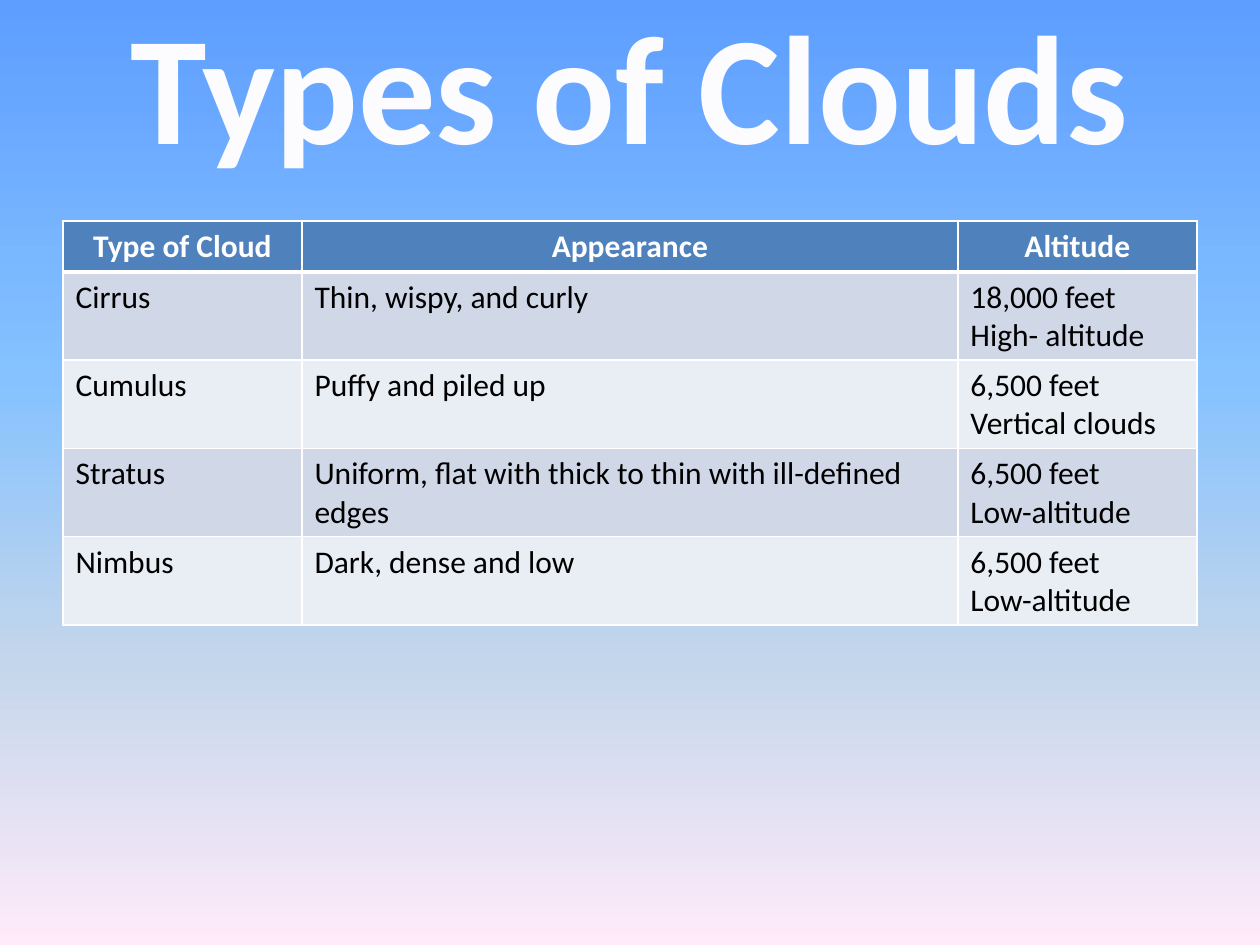
from lxml import etree
from pptx import Presentation
from pptx.dml.color import RGBColor
from pptx.enum.text import MSO_ANCHOR, PP_ALIGN
from pptx.oxml import parse_xml
from pptx.oxml.ns import nsdecls, qn
from pptx.util import Pt

CENTER, LEFT = PP_ALIGN.CENTER, PP_ALIGN.LEFT
MIDDLE = MSO_ANCHOR.MIDDLE
PX = 914400 // 126
FONT = "Calibri"

TITLE = "Types of Clouds"
CLOUDS = [
    ("Type of Cloud", "Appearance", "Altitude"),
    ("Cirrus", "Thin, wispy, and curly", "18,000 feet\nHigh- altitude"),
    ("Cumulus", "Puffy and piled up", "6,500 feet\nVertical clouds"),
    ("Stratus", "Uniform, flat with thick to thin with ill-defined edges",
     "6,500 feet\nLow-altitude"),
    ("Nimbus", "Dark, dense and low", "6,500 feet\nLow-altitude"),
]
COLUMN_WIDTHS = [239, 656, 239]
ROW_HEIGHT = 51
SKY = [(0, "5E9EFF"), (40, "85C2FF"), (70, "C4D6EB"), (100, "FFEBFA")]
COLORS = {
    "title": "FCFCFF", "title_outline": "1E7CEE", "header": "4F81BD",
    "header_text": "FFFFFF", "odd_row": "D0D8E8", "even_row": "E9EDF4",
    "text": "000000", "border": "FFFFFF",
}


def px(*lengths):
    return [length * PX for length in lengths]


def paint_sky(slide):
    stops = "".join(
        f'<a:gs pos="{pos * 1000}"><a:srgbClr val="{color}"/></a:gs>'
        for pos, color in SKY)
    sky = parse_xml(
        f'<p:bg {nsdecls("p", "a")}><p:bgPr><a:gradFill rotWithShape="1">'
        f'<a:gsLst>{stops}</a:gsLst><a:lin ang="5400000" scaled="0"/>'
        '</a:gradFill><a:effectLst/></p:bgPr></p:bg>')
    slide.element.cSld.insert(0, sky)


def format_text(frame, size, color, bold, align):
    for paragraph in frame.paragraphs:
        paragraph.alignment = align
        for run in paragraph.runs:
            run.font.name = FONT
            run.font.size = Pt(size)
            run.font.bold = bold
            run.font.color.rgb = RGBColor.from_string(COLORS[color])


def add_title(slide):
    title = slide.shapes.add_textbox(*px(63, 38, 1134, 158)).text_frame
    title.word_wrap = True
    title.vertical_anchor = MIDDLE
    title.margin_bottom = 74 * PX
    title.text = TITLE
    format_text(title, 88.2, "title", True, CENTER)
    outline = parse_xml(
        f'<a:ln {nsdecls("a")} w="889"><a:solidFill>'
        f'<a:srgbClr val="{COLORS["title_outline"]}"><a:alpha val="55000"/>'
        '</a:srgbClr></a:solidFill></a:ln>')
    title.paragraphs[0].runs[0].font._element.insert(0, outline)


def set_borders(cell, widths):
    properties = cell._tc.get_or_add_tcPr()
    for place, (side, width) in enumerate(widths.items()):
        line = etree.Element(qn(f"a:ln{side}"), w=str(Pt(width)))
        fill = etree.SubElement(line, qn("a:solidFill"))
        etree.SubElement(fill, qn("a:srgbClr"), val=COLORS["border"])
        properties.insert(place, line)


def add_clouds(slide):
    table = slide.shapes.add_table(
        len(CLOUDS), len(COLUMN_WIDTHS),
        *px(63, 221, sum(COLUMN_WIDTHS), ROW_HEIGHT * len(CLOUDS))).table
    for column, width in zip(table.columns, COLUMN_WIDTHS):
        column.width = width * PX
    for r, entries in enumerate(CLOUDS):
        table.rows[r].height = ROW_HEIGHT * PX
        header = r == 0
        fill = "header" if header else "odd_row" if r % 2 else "even_row"
        for c, entry in enumerate(entries):
            cell = table.cell(r, c)
            cell.text_frame.text = entry
            format_text(cell.text_frame, 18,
                        "header_text" if header else "text",
                        header, CENTER if header else LEFT)
            cell.fill.solid()
            cell.fill.fore_color.rgb = RGBColor.from_string(COLORS[fill])
            set_borders(cell, {"L": 1, "R": 1, "T": 3 if r == 1 else 1,
                               "B": 3 if header else 1})


def main():
    deck = Presentation()
    deck.slide_width, deck.slide_height = px(1260, 945)
    slide = deck.slides.add_slide(deck.slide_layouts[6])
    paint_sky(slide)
    add_title(slide)
    add_clouds(slide)
    deck.save("out.pptx")


if __name__ == "__main__":
    main()
